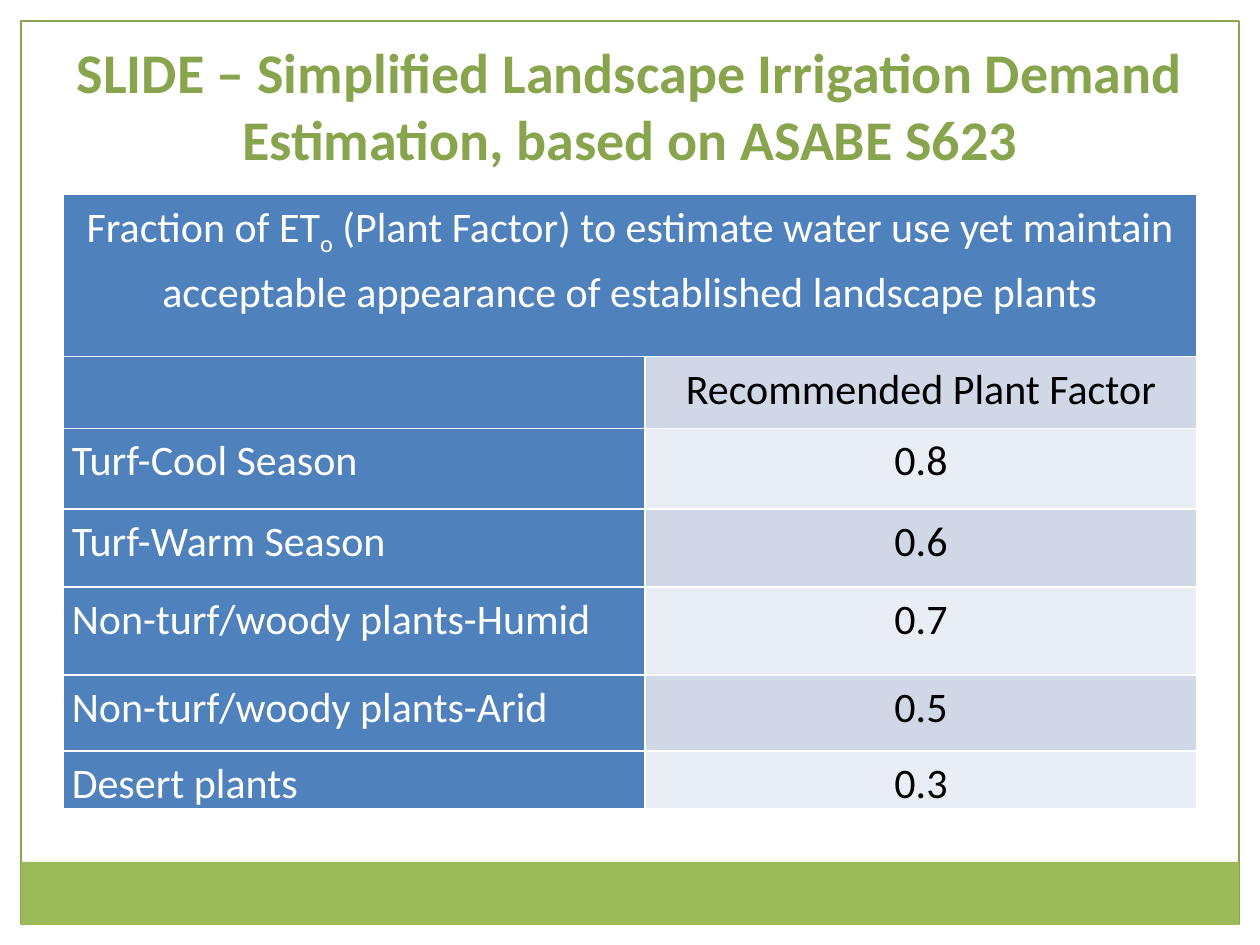
from dataclasses import dataclass

from lxml import etree
from pptx import Presentation
from pptx import util as u
from pptx.dml.color import RGBColor
from pptx.enum import shapes, text
from pptx.oxml.ns import qn

WIDTH, HEIGHT = 10, 7.5
MARGIN_X, MARGIN_Y = 1 / 60, 1 / 45
COLUMN_WIDTHS = [4.62, 4.38]
ROW_HEIGHTS = [1.29, 0.57, 0.64, 0.62, 0.7, 0.6, 0.42]
HEADING = [
    ("Fraction of ET", False),
    ("o", True),
    (" (Plant Factor) to estimate water use yet maintain "
     "acceptable appearance of established landscape plants", False),
]
PLANT_FACTORS = [
    ("", "Recommended Plant Factor"),
    ("Turf-Cool Season", "0.8"),
    ("Turf-Warm Season", "0.6"),
    ("Non-turf/woody plants-Humid", "0.7"),
    ("Non-turf/woody plants-Arid", "0.5"),
    ("Desert plants", "0.3"),
]


@dataclass(frozen=True)
class Theme:
    font: str = "Calibri"
    title_size: int = 32
    table_size: int = 24
    title: str = "88A44D"
    frame: str = "89A54F"
    footer: str = "9BBB59"
    header: str = "4F81BD"
    bands: tuple = ("D0D8E8", "E9EDF4")
    light: str = "FFFFFF"
    dark: str = "000000"


THEME = Theme()


def color(value):
    return RGBColor.from_string(value)


def box(left, top, width, height):
    return [u.Inches(WIDTH * left), u.Inches(HEIGHT * top),
            u.Inches(WIDTH * width), u.Inches(HEIGHT * height)]


def style(paragraph, size, ink, bold=False, align=text.PP_ALIGN.CENTER):
    paragraph.alignment = align
    font = paragraph.font
    font.name, font.size, font.bold = THEME.font, u.Pt(size), bold
    font.color.rgb = color(ink)


def add_rectangle(slide, area, fill=None, line=None):
    shape = slide.shapes.add_shape(shapes.MSO_SHAPE.RECTANGLE, *area)
    shape.shadow.inherit = False
    if fill:
        shape.fill.solid()
        shape.fill.fore_color.rgb = color(fill)
    else:
        shape.fill.background()
    if line:
        shape.line.color.rgb = color(line)
        shape.line.width = u.Pt(0.75)
    else:
        shape.line.fill.background()


def add_page_frame(slide):
    inner_width = 1 - 2 * MARGIN_X
    margins = [
        (0, 0, 1, MARGIN_Y),
        (1 - MARGIN_X, 0, MARGIN_X, 1),
        (0, 0, MARGIN_X, 1),
    ]
    for margin in margins:
        add_rectangle(slide, box(*margin), fill=THEME.light)
    add_rectangle(slide, box(MARGIN_X, MARGIN_Y, inner_width, 1 - 2 * MARGIN_Y),
                  line=THEME.frame)
    add_rectangle(slide, box(MARGIN_X, 6.84 / HEIGHT, inner_width, 0.5 / HEIGHT),
                  fill=THEME.footer)


def add_title(slide, area, words):
    frame = slide.shapes.add_textbox(*area).text_frame
    frame.word_wrap = True
    frame.vertical_anchor = text.MSO_ANCHOR.BOTTOM
    paragraph = frame.paragraphs[0]
    paragraph.text = words
    style(paragraph, THEME.title_size, THEME.title, bold=True)


def set_borders(cell):
    properties = cell._tc.get_or_add_tcPr()
    for position, side in enumerate(("lnL", "lnR", "lnT", "lnB")):
        line = etree.Element(qn(f"a:{side}"), w=str(u.Pt(1)))
        fill = etree.SubElement(line, qn("a:solidFill"))
        etree.SubElement(fill, qn("a:srgbClr"), val=THEME.light)
        properties.insert(position, line)


def fill_cell(cell, runs, fill, ink, align=text.PP_ALIGN.CENTER):
    cell.fill.solid()
    cell.fill.fore_color.rgb = color(fill)
    set_borders(cell)
    cell.margin_left = cell.margin_right = u.Inches(0.07)
    cell.margin_top = cell.margin_bottom = 0
    paragraph = cell.text_frame.paragraphs[0]
    for words, subscript in runs:
        run = paragraph.add_run()
        run.text = words
        if subscript:
            run.font._element.set("baseline", "-25000")
    paragraph.line_spacing = 1.15
    style(paragraph, THEME.table_size, ink, align=align)


def add_factor_table(slide, area):
    frame = slide.shapes.add_table(len(ROW_HEIGHTS), len(COLUMN_WIDTHS), *area)
    table = frame.table
    for column, width in zip(table.columns, COLUMN_WIDTHS):
        column.width = u.Inches(width)
    for row, height in zip(table.rows, ROW_HEIGHTS):
        row.height = u.Inches(height)
    table.cell(0, 0).merge(table.cell(0, 1))
    fill_cell(table.cell(0, 0), HEADING, THEME.header, THEME.light)
    for index, (plant, factor) in enumerate(PLANT_FACTORS):
        row = index + 1
        plant_runs = [(plant, False)] if plant else []
        fill_cell(table.cell(row, 0), plant_runs, THEME.header, THEME.light,
                  text.PP_ALIGN.LEFT)
        fill_cell(table.cell(row, 1), [(factor, False)],
                  THEME.bands[index % 2], THEME.dark)


def main():
    presentation = Presentation()
    presentation.slide_width = u.Inches(WIDTH)
    presentation.slide_height = u.Inches(HEIGHT)
    slide = presentation.slides.add_slide(presentation.slide_layouts[6])
    add_page_frame(slide)
    add_title(slide, box(2 * MARGIN_X, 2 * MARGIN_Y, 1 - 4 * MARGIN_X,
                         1.08 / HEIGHT),
              "SLIDE – Simplified Landscape Irrigation Demand "
              "Estimation, based on ASABE S623")
    add_factor_table(slide, box(0.05, 1.54 / HEIGHT, 0.9,
                                sum(ROW_HEIGHTS) / HEIGHT))
    presentation.save("out.pptx")


if __name__ == "__main__":
    main()
